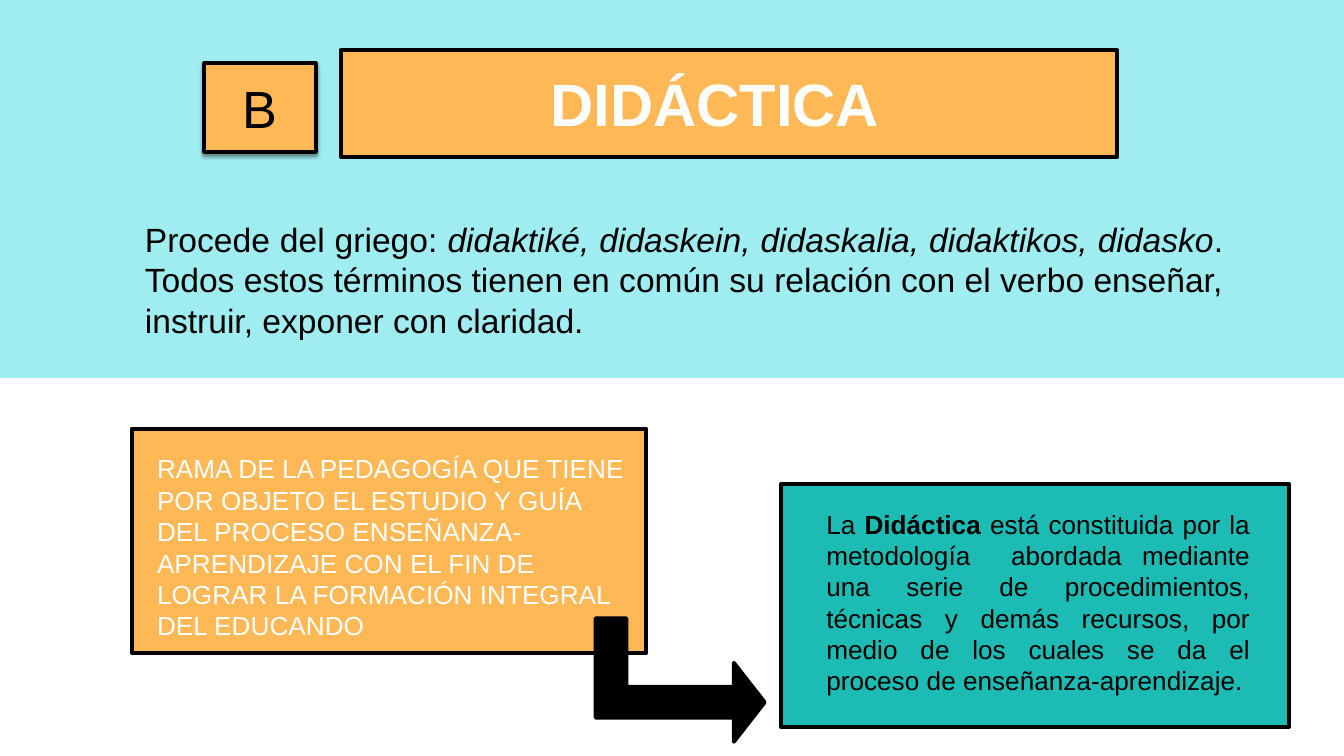
from lxml import etree
from pptx import Presentation
from pptx.dml.color import RGBColor
from pptx.enum.shapes import MSO_SHAPE
from pptx.enum.text import MSO_ANCHOR, PP_ALIGN
from pptx.oxml.ns import qn
from pptx.util import Inches, Pt

RECTANGLE = MSO_SHAPE.RECTANGLE
BENT_ARROW = MSO_SHAPE.BENT_UP_ARROW
TOP, MIDDLE = MSO_ANCHOR.TOP, MSO_ANCHOR.MIDDLE
LEFT, CENTER, JUSTIFY = PP_ALIGN.LEFT, PP_ALIGN.CENTER, PP_ALIGN.JUSTIFY

WIDTH = 10
HEIGHT = WIDTH * 9 / 16
FONT = "Arial"
COLORS = {
    "sky": "9FEDF0",
    "orange": "FEB856",
    "teal": "1CBBB4",
    "black": "000000",
    "white": "FFFFFF",
}


def color(name):
    return RGBColor.from_string(COLORS[name])


def add_block(page, box, fill, kind=RECTANGLE, outlined=True):
    block = page.shapes.add_shape(kind, *map(Inches, box))
    block.shadow.inherit = False
    block.fill.solid()
    block.fill.fore_color.rgb = color(fill)
    if outlined:
        block.line.color.rgb = color("black")
        block.line.width = Pt(2)
    else:
        block.line.fill.background()
    return block


def add_drop_shadow(block, blur, distance, opacity):
    effects = block.element.spPr.find(qn("a:effectLst"))
    shadow = etree.SubElement(
        effects, qn("a:outerShdw"), blurRad=str(Pt(blur)),
        dist=str(Pt(distance)), dir="5400000", rotWithShape="0")
    tint = etree.SubElement(shadow, qn("a:srgbClr"), val=COLORS["black"])
    etree.SubElement(tint, qn("a:alpha"), val=str(opacity * 1000))


def write_text(shape, spans, size, ink="black", align=LEFT, anchor=TOP, wrap=True):
    """Fill a shape with one paragraph; spans are (text, style) pairs."""
    frame = shape.text_frame
    frame.word_wrap = wrap
    frame.vertical_anchor = anchor
    para = frame.paragraphs[0]
    para.alignment = align
    for text, style in spans:
        span = para.add_run()
        span.text = text
        span.font.name = FONT
        span.font.size = Pt(size)
        span.font.bold = style == "bold"
        span.font.italic = style == "italic"
        span.font.color.rgb = color(ink)


def add_text(page, box, spans, size, **style):
    text_box = page.shapes.add_textbox(*map(Inches, box))
    write_text(text_box, spans, size, **style)


def add_header(page, box):
    """Letter badge on the left, title banner on the right."""
    left, top, width, height = box
    badge = add_block(page, (left, top + 0.1, 0.83, 0.66), "orange")
    add_drop_shadow(badge, blur=2, distance=1.5, opacity=40)
    write_text(badge, [("B", None)], 28, align=CENTER, anchor=MIDDLE, wrap=False)

    banner_left = left + 1.02
    add_block(page, (banner_left, top, width - 1.02, height), "orange")
    title = page.shapes.title
    title.left, title.top = Inches(banner_left + 0.18), Inches(top + 0.08)
    title.width, title.height = Inches(5.2), Inches(0.64)
    write_text(title, [("DIDÁCTICA", "bold")], 32, ink="white", align=CENTER)
    # Bring the title in front of its banner
    title.element.getparent().append(title.element)


def add_card(page, box, fill, text_box, spans, **style):
    """Outlined card; text_box is relative to the card's corner."""
    left, top, width, height = box
    add_block(page, box, fill)
    dx, dy, text_width, text_height = text_box
    add_text(page, (left + dx, top + dy, text_width, text_height), spans, 14, **style)


def add_turn_arrow(page, box):
    arrow = add_block(page, box, "black", kind=BENT_ARROW)
    arrow.rotation = 90
    for index, value in enumerate((0.25, 0.32, 0.25)):
        arrow.adjustments[index] = value


def main():
    deck = Presentation()
    deck.slide_width, deck.slide_height = Inches(WIDTH), Inches(HEIGHT)
    page = deck.slides.add_slide(deck.slide_layouts.get_by_name("Title Only"))

    # Upper half: band, header and origin of the word
    add_block(page, (0, 0, WIDTH, HEIGHT / 2), "sky", outlined=False)
    add_header(page, (1.52, 0.37, 6.79, 0.8))
    add_text(page, (0.98, 1.58, 8.22, 1.01), [
        ("Procede del griego: ", None),
        ("didaktiké, didaskein, didaskalia, didaktikos, didasko", "italic"),
        (". Todos estos términos tienen en común su relación con el verbo "
         "enseñar, instruir, exponer con claridad.", None),
    ], 18, align=JUSTIFY)

    # Lower half: definition, composition and the arrow between them
    add_card(page, (5.81, 3.6, 3.78, 1.81), "teal", (0.24, 0.13, 3.35, 1.51), [
        ("La ", None),
        ("Didáctica", "bold"),
        (" está constituida por la metodología  abordada mediante una serie de "
         "procedimientos, técnicas y demás recursos, por medio de los cuales "
         "se da el proceso de enseñanza-aprendizaje.", None),
    ], align=JUSTIFY)
    add_card(page, (0.98, 3.19, 3.83, 1.67), "orange", (0.09, 0.13, 3.71, 1.28), [
        ("RAMA DE LA PEDAGOGÍA QUE TIENE POR OBJETO EL ESTUDIO Y GUÍA DEL "
         "PROCESO ENSEÑANZA-APRENDIZAJE CON EL FIN DE LOGRAR LA FORMACIÓN "
         "INTEGRAL DEL EDUCANDO", None),
    ], ink="white")
    add_turn_arrow(page, (4.6, 4.43, 0.92, 1.26))

    deck.save("out.pptx")


if __name__ == "__main__":
    main()
